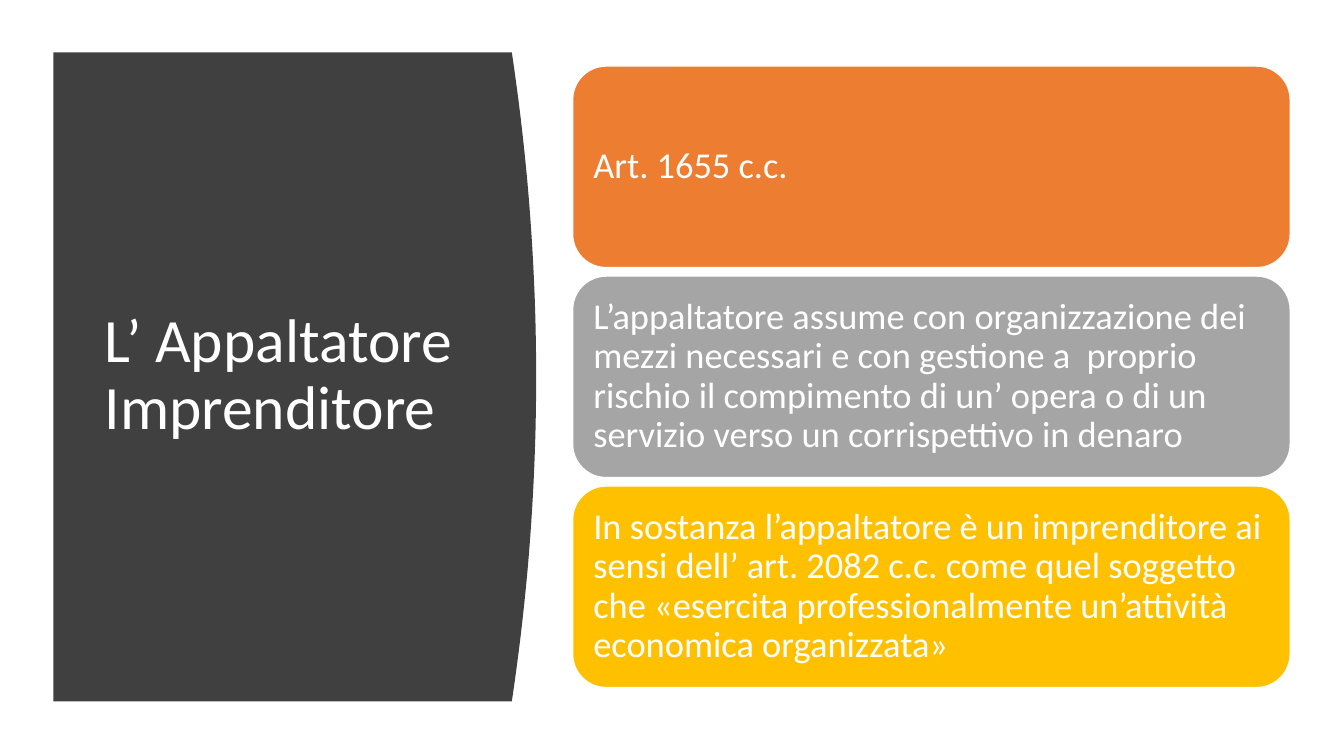
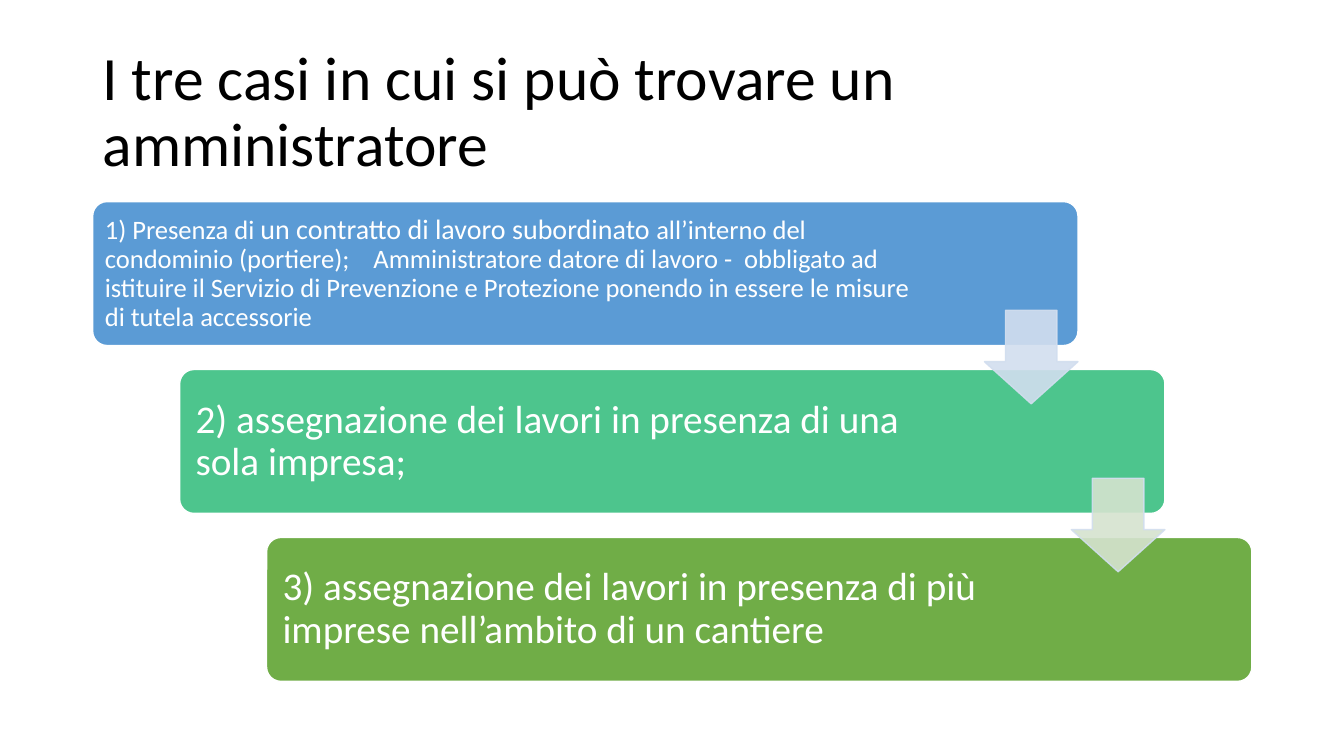
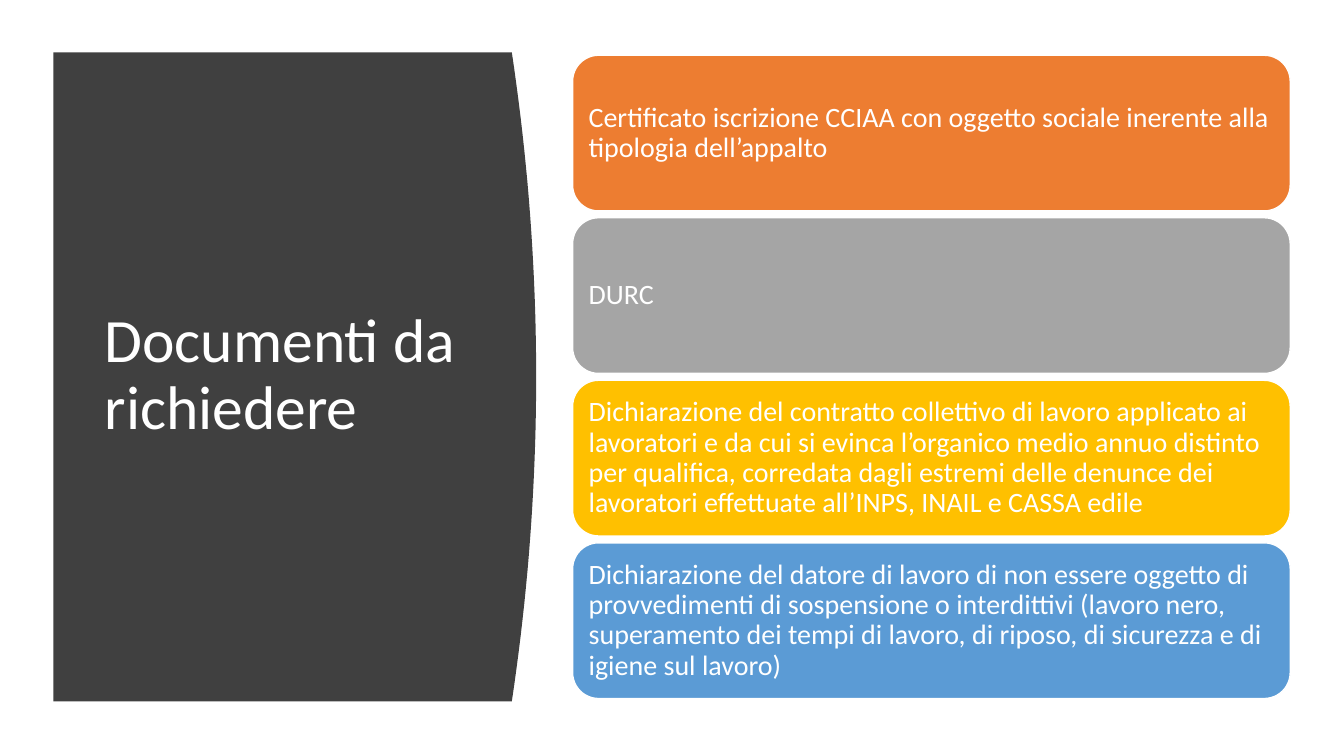
from collections import namedtuple

from lxml.etree import SubElement
from pptx import Presentation
from pptx.dml.color import RGBColor
from pptx.enum.shapes import MSO_SHAPE
from pptx.enum.text import MSO_ANCHOR, PP_ALIGN
from pptx.oxml.ns import qn
from pptx.util import Pt

Box = namedtuple("Box", "left top width height")

WHITE = RGBColor(0xFF, 0xFF, 0xFF)
BLACK = RGBColor(0x00, 0x00, 0x00)
CHARCOAL = RGBColor(0x40, 0x40, 0x40)
ORANGE = RGBColor(0xED, 0x7D, 0x31)
GREY = RGBColor(0xA5, 0xA5, 0xA5)
GOLD = RGBColor(0xFF, 0xC0, 0x00)
BLUE = RGBColor(0x5B, 0x9B, 0xD5)
MINT = RGBColor(0x4D, 0xC5, 0x8D)
GREEN = RGBColor(0x70, 0xAD, 0x47)
PALE_BLUE = RGBColor(0xD2, 0xDE, 0xEF)
PALE_GREEN = RGBColor(0xD5, 0xE3, 0xCF)
STACK_COLOURS = (ORANGE, GREY, GOLD, BLUE)

FONT = "Calibri"
TITLE_SIZE = 44
PANEL = Box(38.2, 37.4, 344.8, 463.6)
PANEL_BULGE = 17.4
PANEL_TITLE = Box(67.7, 79.9, 269.3, 377.3)
STACK = Box(409, 37.4, 512.6, 463.6)
TOP_TITLE = Box(66.2, 28.8, 828, 104.4)
STAIRCASE = Box(66.2, 144, 828, 342.7)


def points(box):
    return [Pt(length) for length in box]


def write_text(frame, lines, colour, margins):
    frame.word_wrap = True
    frame.vertical_anchor = MSO_ANCHOR.MIDDLE
    frame.margin_left, frame.margin_top, frame.margin_right, frame.margin_bottom = points(margins)
    para = frame.paragraphs[0]
    para.alignment = PP_ALIGN.LEFT
    para.line_spacing = 0.9
    for number, line in enumerate(lines):
        if number:
            para.add_line_break()
        for text, size in line:
            span = para.add_run()
            span.text = text
            span.font.name = FONT
            span.font.size = Pt(size)
            span.font.color.rgb = colour


def add_title(page, box, lines, colour):
    title = page.shapes.add_textbox(*points(box))
    write_text(title.text_frame, [[(line, TITLE_SIZE)] for line in lines],
               colour, (7.2, 3.6, 7.2, 3.6))


def add_filled(page, preset, box, fill, line):
    shape = page.shapes.add_shape(preset, *points(box))
    shape.shadow.inherit = False
    shape.fill.solid()
    shape.fill.fore_color.rgb = fill
    shape.line.color.rgb = line
    shape.line.width = Pt(1)
    return shape


def add_card(page, box, fill, spans, margin, extra_right=0, corner=0.1667):
    card = add_filled(page, MSO_SHAPE.ROUNDED_RECTANGLE, box, fill, WHITE)
    card.adjustments[0] = corner
    write_text(card.text_frame, [spans], WHITE,
               (margin, margin, margin + extra_right, margin))


def add_arrow(page, box, fill):
    arrow = add_filled(page, MSO_SHAPE.DOWN_ARROW, box, fill, PALE_BLUE)
    arrow.adjustments[0] = 0.55
    arrow.adjustments[1] = 0.45
    for colour in arrow._element.spPr.iter(qn("a:srgbClr")):
        SubElement(colour, qn("a:alpha")).set("val", "90000")


def add_panel(page, box, title_lines):
    steps = 40
    edge = []
    for step in range(steps + 1):
        offset = 2 * step / steps - 1
        edge.append((Pt(box.left + box.width - PANEL_BULGE * offset ** 2),
                     Pt(box.top + box.height * step / steps)))
    builder = page.shapes.build_freeform(Pt(box.left), Pt(box.top))
    builder.add_line_segments(edge + [(Pt(box.left), Pt(box.top + box.height))], close=True)
    panel = builder.convert_to_shape()
    panel.shadow.inherit = False
    panel.fill.solid()
    panel.fill.fore_color.rgb = CHARCOAL
    panel.line.fill.background()
    add_title(page, PANEL_TITLE, title_lines, WHITE)


def add_stack(page, box, texts, height, gap, size, margin):
    total = len(texts) * (height + gap) - gap
    top = box.top + (box.height - total) / 2
    for number, (text, colour) in enumerate(zip(texts, STACK_COLOURS)):
        place = Box(box.left, top + number * (height + gap), box.width, height)
        add_card(page, place, colour, [(text, size)], margin)


def add_staircase(page, box, stairs, arrow_colours):
    width, height = 0.85 * box.width, 0.3 * box.height
    places = [Box(box.left + number * 0.075 * box.width,
                  box.top + number * 0.35 * box.height, width, height)
              for number in range(len(stairs))]
    for place, (colour, spans, margin, extra_right) in zip(places, stairs):
        add_card(page, place, colour, spans, margin, extra_right, 0.1)
    side = 0.65 * height
    for place, colour in zip(places, arrow_colours):
        add_arrow(page, Box(place.left + width - side, place.top + 0.755 * height,
                            side, side), colour)


def add_panel_page(deck, title_lines, texts, **style):
    page = deck.slides.add_slide(deck.slide_layouts[6])
    add_panel(page, PANEL, title_lines)
    add_stack(page, STACK, texts, **style)


def add_staircase_page(deck, title, stairs, arrow_colours):
    page = deck.slides.add_slide(deck.slide_layouts[6])
    add_title(page, TOP_TITLE, [title], BLACK)
    add_staircase(page, STAIRCASE, stairs, arrow_colours)


def main():
    deck = Presentation()
    deck.slide_width, deck.slide_height = Pt(960), Pt(540)

    add_panel_page(deck, ["L’ Appaltatore", "Imprenditore"], [
        "Art. 1655 c.c.",
        "L’appaltatore assume con organizzazione dei mezzi necessari e con gestione a  proprio "
        "rischio il compimento di un’ opera o di un servizio verso un corrispettivo in denaro",
        "In sostanza l’appaltatore è un imprenditore ai sensi dell’ art. 2082 c.c. come quel "
        "soggetto che «esercita professionalmente un’attività economica organizzata»",
    ], height=144, gap=6, size=26, margin=7.8)

    add_staircase_page(deck, "I tre casi in cui si può trovare un amministratore", [
        (BLUE, [
            ("1) Presenza di ", 19),
            ("un contratto di lavoro subordinato ", 20),
            ("all’interno del condominio (portiere);    Amministratore datore di lavoro -  "
             "obbligato ad istituire il Servizio di Prevenzione e Protezione ponendo in essere "
             "le misure di tutela accessorie", 19),
        ], 5.7, 105.5),
        (MINT, [("2) assegnazione dei lavori in presenza di una sola impresa;", 28)], 8.4, 129),
        (GREEN, [("3) assegnazione dei lavori in presenza di più imprese nell’ambito di un "
                  "cantiere", 28)], 8.4, 129),
    ], [PALE_BLUE, PALE_GREEN])

    add_panel_page(deck, ["Documenti da richiedere"], [
        "Certificato iscrizione CCIAA con oggetto sociale inerente alla tipologia dell’appalto",
        "DURC",
        "Dichiarazione del contratto collettivo di lavoro applicato ai lavoratori e da cui si "
        "evinca l’organico medio annuo distinto per qualifica, corredata dagli estremi delle "
        "denunce dei lavoratori effettuate all’INPS, INAIL e CASSA edile",
        "Dichiarazione del datore di lavoro di non essere oggetto di provvedimenti di "
        "sospensione o interdittivi (lavoro nero, superamento dei tempi di lavoro, di riposo, "
        "di sicurezza e di igiene sul lavoro)",
    ], height=111.2, gap=4.9, size=20, margin=6)

    deck.save("out.pptx")


if __name__ == "__main__":
    main()
